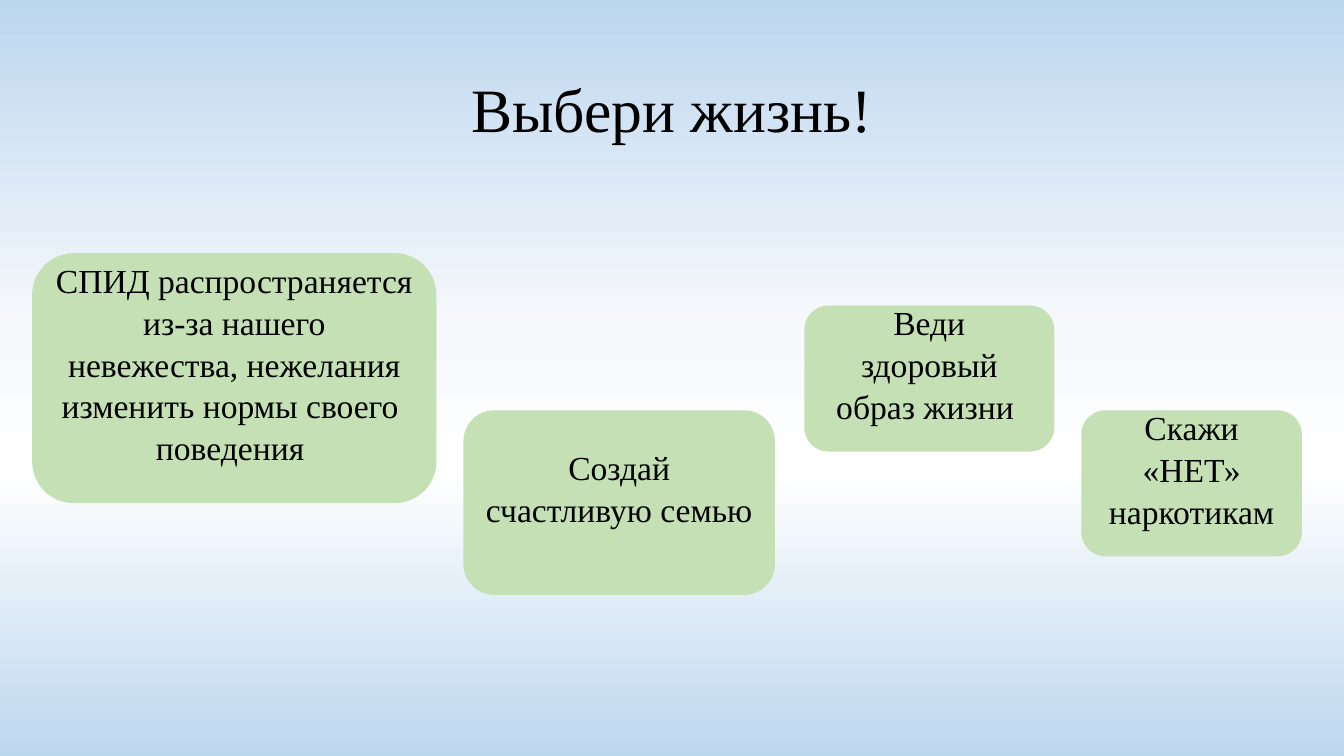
from dataclasses import dataclass

from lxml.etree import SubElement
from pptx import Presentation
from pptx.dml.color import RGBColor
from pptx.enum.shapes import MSO_SHAPE
from pptx.enum.text import MSO_ANCHOR, PP_ALIGN
from pptx.oxml.ns import qn
from pptx.util import Cm, Pt


@dataclass(frozen=True)
class Theme:
    font: str = "Times New Roman"
    text: str = "000000"
    card: str = "C5E0B4"
    title_size: int = 44
    card_size: int = 24
    background: tuple = ((0, "BDD7EE"), (43, "F6F8FC"), (62, "FFFFFF"), (100, "BDD7EE"))


THEME = Theme()

# Left, top, width and height in centimetres, then the wording
CARDS = (
    (27.25, 10.34, 5.56, 3.68, "Скажи «НЕТ» наркотикам"),
    (0.81, 6.38, 10.19, 6.3,
     "СПИД распространяется из-за нашего невежества, нежелания изменить нормы своего  поведения "),
    (20.27, 7.7, 6.3, 3.68, "Веди здоровый образ жизни "),
    (11.68, 10.34, 7.85, 4.65, "Создай счастливую семью"),
)


def set_attributes(target, values):
    for name, value in values.items():
        setattr(target, name, value)


def paint_background(slide):
    """Fill the background with the theme's top-to-bottom gradient."""
    fill = slide.background.fill
    fill.gradient()
    fill.gradient_angle = 270
    stops = slide.element.find(".//" + qn("a:gsLst"))
    for stop in list(stops):
        stops.remove(stop)
    for percent, color in THEME.background:
        stop = SubElement(stops, qn("a:gs"), pos=str(percent * 1000))
        SubElement(stop, qn("a:srgbClr"), val=color)


def write_text(shape, text, size, line_spacing, bottom_margin):
    frame = shape.text_frame
    set_attributes(frame, {
        "word_wrap": True,
        "vertical_anchor": MSO_ANCHOR.MIDDLE,
        "margin_bottom": bottom_margin,
    })
    paragraph = frame.paragraphs[0]
    set_attributes(paragraph, {"alignment": PP_ALIGN.CENTER, "line_spacing": line_spacing})
    run = paragraph.add_run()
    run.text = text
    set_attributes(run.font, {"name": THEME.font, "size": Pt(size)})
    run.font.color.rgb = RGBColor.from_string(THEME.text)


def add_title(slide, text):
    title = slide.shapes.add_textbox(Cm(2.33), Cm(1.01), Cm(29.21), Cm(3.68))
    write_text(title, text, THEME.title_size, 0.9, Cm(0.13))


def add_card(slide, left, top, width, height, text):
    card = slide.shapes.add_shape(
        MSO_SHAPE.ROUNDED_RECTANGLE, Cm(left), Cm(top), Cm(width), Cm(height))
    card.shadow.inherit = False
    card.fill.solid()
    card.fill.fore_color.rgb = RGBColor.from_string(THEME.card)
    card.line.fill.background()
    write_text(card, text, THEME.card_size, 1.04, Cm(0.9))


def main():
    presentation = Presentation()
    set_attributes(presentation, {"slide_width": Cm(33.87), "slide_height": Cm(19.05)})
    slide = presentation.slides.add_slide(presentation.slide_layouts[6])
    paint_background(slide)
    for card in CARDS:
        add_card(slide, *card)
    add_title(slide, "Выбери жизнь!")
    presentation.save("out.pptx")


if __name__ == "__main__":
    main()
